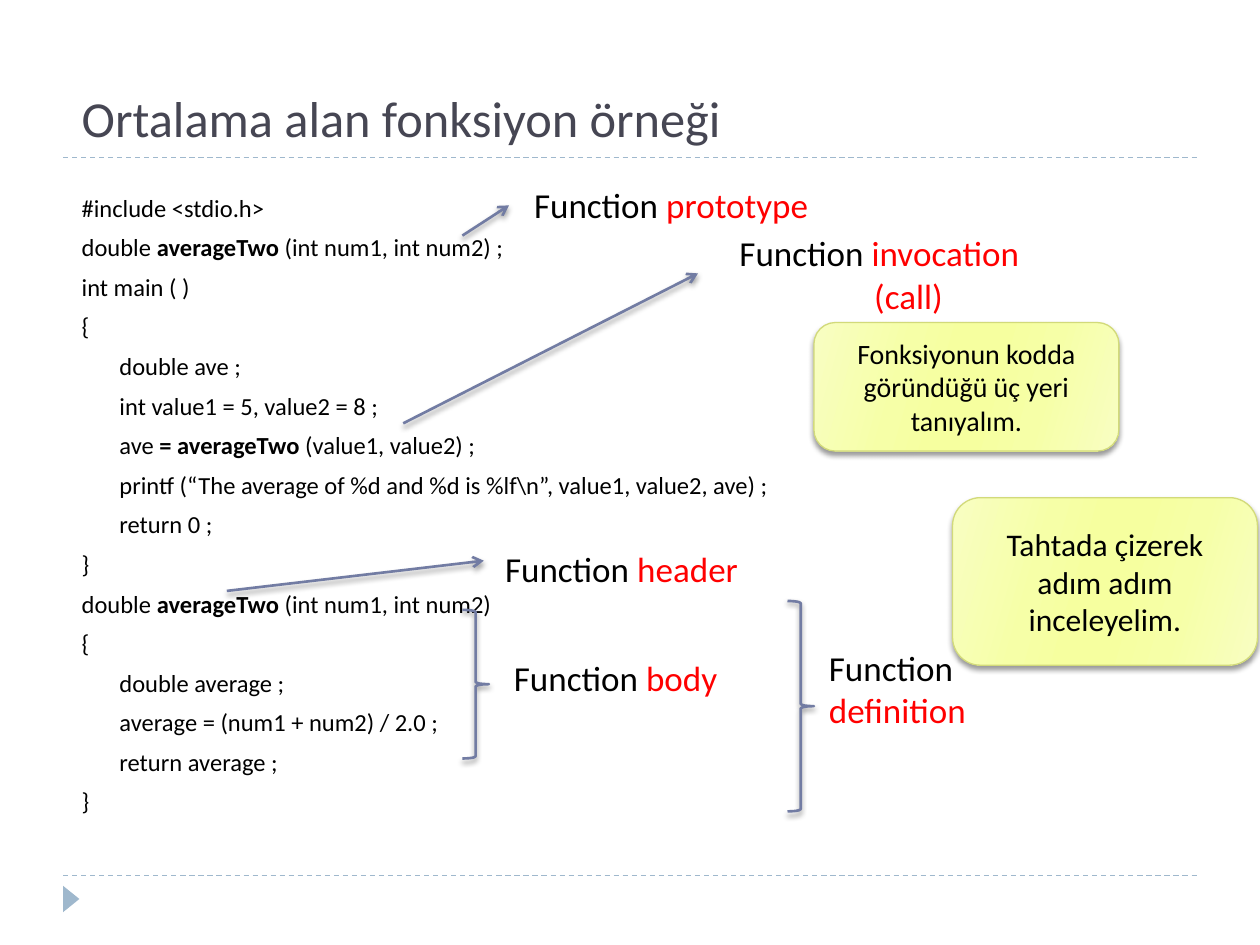
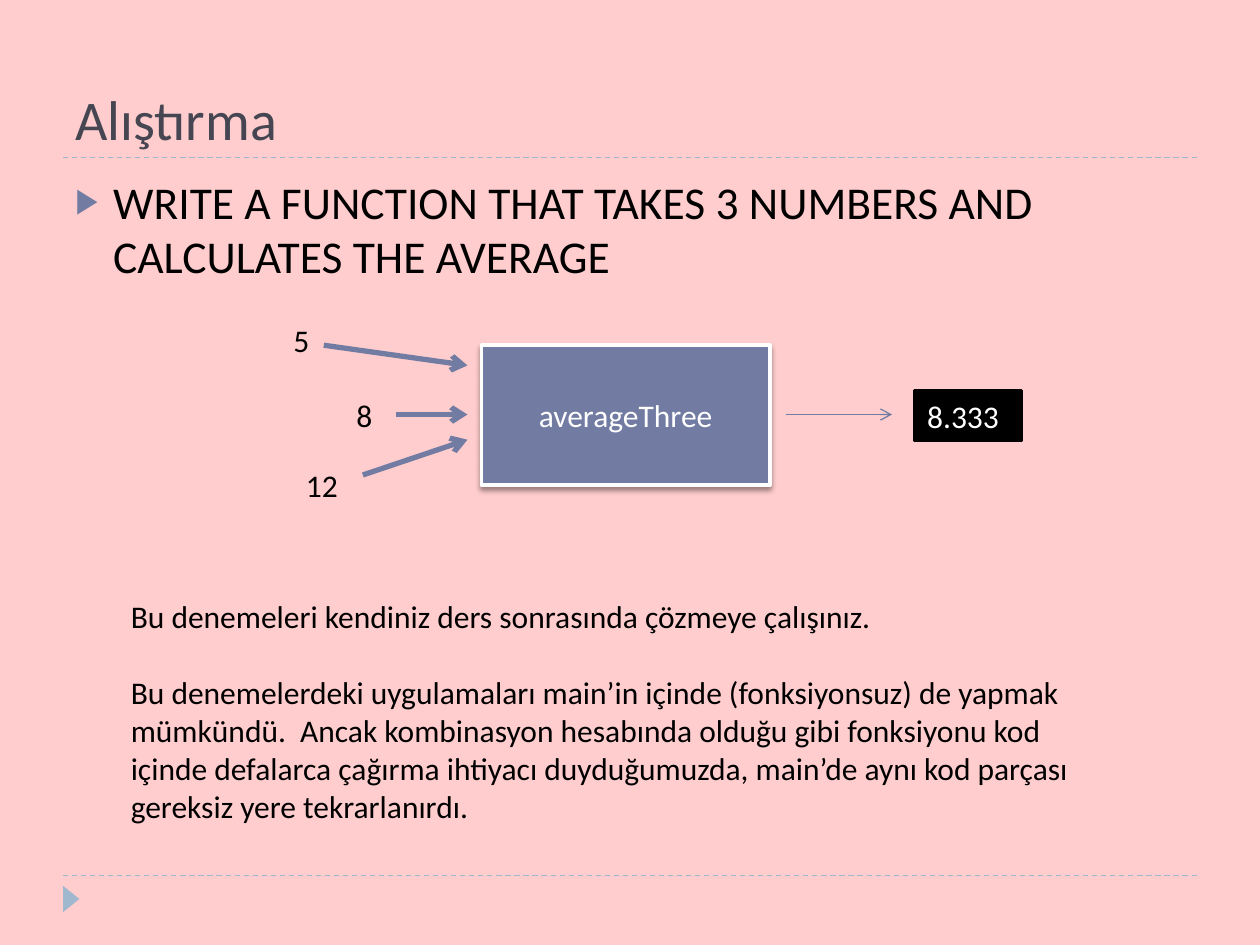
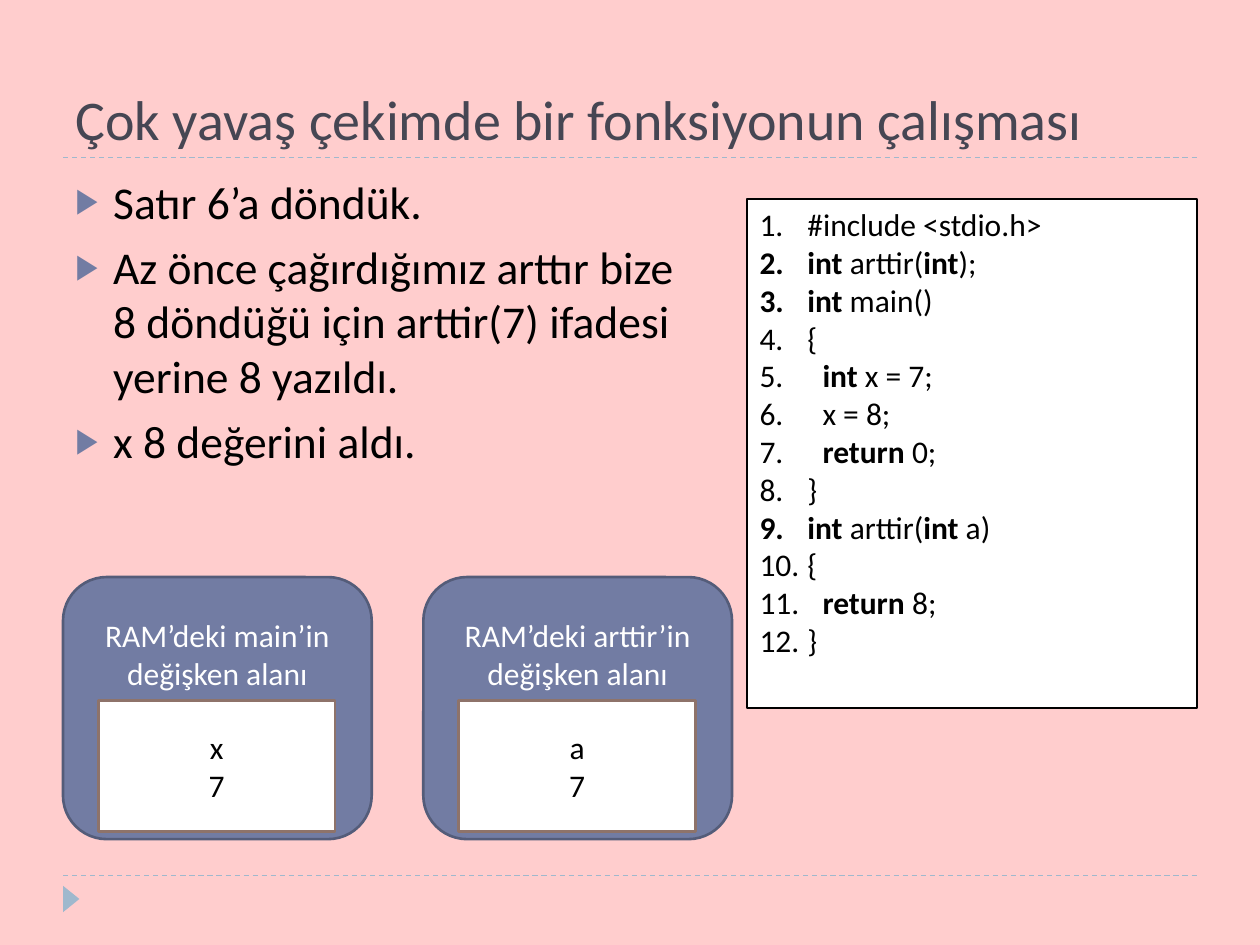
from lxml.etree import SubElement
from pptx import Presentation
from pptx.dml.color import RGBColor
from pptx.enum.dml import MSO_LINE
from pptx.enum.shapes import MSO_CONNECTOR, MSO_SHAPE as Shape
from pptx.enum.text import MSO_ANCHOR as Anchor, PP_ALIGN as Align
from pptx.oxml.ns import qn
from pptx.util import Inches, Pt

FONT = "Calibri"
BLACK, WHITE, RED = "000000", "FFFFFF", "FF0000"
PINK, TITLE_GREY, BLUE, BAND_BLUE = "FFCDCD", "464653", "727CA3", "9FB8CD"
DARK_BLUE, BROWN, NOTE_EDGE = "545C79", "8E736A", "D2DA7A"
NOTE_STOPS = [(0, "F8FEC2"), (30, "F6FFA7"), (45, "F6FF9F"),
              (55, "F6FF9F"), (73, "F6FFA7"), (100, "F8FEC2")]

WIDTH, HEIGHT = 10, 7.5
MARGIN = WIDTH / 20
CONTENT = WIDTH - 2 * MARGIN
TITLE_LINE, FOOTER_LINE = 1.25, 6.95
BODY = (MARGIN, 1.33, CONTENT, 5.4)
HANGING = 0.3

PROGRAM = [
    "#include <stdio.h>",
    "double *averageTwo* (int num1, int num2) ;",
    "int main ( )",
    "{",
    "\tdouble ave ;",
    "\tint value1 = 5, value2 = 8 ;",
    "\tave *= averageTwo *(value1, value2) ;",
    "\tprintf (“The average of %d and %d is %lf\\n”, value1, value2, ave) ;",
    "\treturn 0 ;",
    "}",
    "double *averageTwo* (int num1, int num2)",
    "{",
    "\tdouble average ;",
    "\taverage = (num1 + num2) / 2.0 ;",
    "\treturn average ;",
    "}",
]
NUMBERED_PROGRAM = [
    "#include <stdio.h>",
    "*int *arttir(*int*);",
    "*int* main()",
    "{",
    "\t*int* x = 7;",
    "\tx = 8;",
    "\t*return* 0;",
    "}",
    "*int *arttir(*int* a)",
    "{",
    "\t*return *8;",
    "}",
]


def rgb(color):
    return RGBColor.from_string(color)


def inches(*lengths):
    return [Inches(length) for length in lengths]


def add_triangle_bullet(properties):
    color = SubElement(properties, qn("a:buClr"))
    SubElement(color, qn("a:srgbClr"), val=BLUE)
    SubElement(properties, qn("a:buSzPct"), val="76000")
    SubElement(properties, qn("a:buFont"), typeface="Arial")
    SubElement(properties, qn("a:buChar"), char="▶")


def add_number(properties):
    SubElement(properties, qn("a:buFont"), typeface="+mj-lt")
    SubElement(properties, qn("a:buAutoNum"), type="arabicPeriod")


def write(shape, lines, size=18, color=BLACK, marked=None, align=Align.LEFT,
          anchor=Anchor.TOP, hanging=0, before=0, after=0, bullet=None, wrap=True):
    """Fill a shape with paragraphs; parts between asterisks are bold, or in the marked colour."""
    frame = shape.text_frame
    frame.word_wrap = wrap
    frame.vertical_anchor = anchor
    for index, line in enumerate(lines):
        paragraph = frame.add_paragraph() if index else frame.paragraphs[0]
        paragraph.alignment = align
        paragraph.space_before, paragraph.space_after = Pt(before), Pt(after)
        properties = paragraph._p.get_or_add_pPr()
        if hanging:
            properties.set("marL", str(Inches(hanging)))
            properties.set("indent", str(-Inches(hanging)))
        if bullet:
            bullet(properties)
        for position, part in enumerate(line.split("*")):
            is_marked = position % 2 == 1
            for row, words in enumerate(part.split("\n")):
                if row:
                    paragraph.add_line_break()
                if not words:
                    continue
                run = paragraph.add_run()
                run.text = words
                font = run.font
                font.name, font.size = FONT, Pt(size)
                font.bold = is_marked and marked is None
                font.color.rgb = rgb(marked if is_marked and marked else color)


def add_text(slide, box, lines, **text_format):
    write(slide.shapes.add_textbox(*inches(*box)), lines, **text_format)


def add_shadow(shape):
    effects = shape.element.spPr.find(qn("a:effectLst"))
    shadow = SubElement(effects, qn("a:outerShdw"), blurRad=str(Pt(3)), dist=str(Pt(2)),
                        dir="5400000", rotWithShape="0")
    color = SubElement(shadow, qn("a:srgbClr"), val=BLACK)
    SubElement(color, qn("a:alpha"), val="40000")


def add_figure(slide, kind, box, fill=None, line=None, weight=1.5, shadow=False):
    figure = slide.shapes.add_shape(kind, *inches(*box))
    figure.shadow.inherit = False
    if fill:
        figure.fill.solid()
        figure.fill.fore_color.rgb = rgb(fill)
    else:
        figure.fill.background()
    if line:
        figure.line.color.rgb = rgb(line)
        figure.line.width = Pt(weight)
    else:
        figure.line.fill.background()
    if shadow:
        add_shadow(figure)
    return figure


def add_line(slide, start, end, color=BLUE, weight=1.5, dashed=False, arrow=False, shadow=False):
    line = slide.shapes.add_connector(MSO_CONNECTOR.STRAIGHT, *inches(*start, *end))
    line.line.color.rgb = rgb(color)
    line.line.width = Pt(weight)
    if dashed:
        line.line.dash_style = MSO_LINE.DASH
    if arrow:
        SubElement(line.line._get_or_add_ln(), qn("a:tailEnd"), type="arrow")
    SubElement(line.element.spPr, qn("a:effectLst"))
    if shadow:
        add_shadow(line)


def add_note(slide, box, text, size):
    """Rounded box with a soft yellow gradient."""
    note = add_figure(slide, Shape.ROUNDED_RECTANGLE, box, line=NOTE_EDGE, weight=0.75, shadow=True)
    note.fill.gradient()
    note.fill.gradient_angle = 344
    stops = note.element.spPr.find(qn("a:gradFill")).find(qn("a:gsLst"))
    stops.clear()
    for percent, color in NOTE_STOPS:
        stop = SubElement(stops, qn("a:gs"), pos=str(percent * 1000))
        SubElement(stop, qn("a:srgbClr"), val=color)
    write(note, [text], size=size, align=Align.CENTER, anchor=Anchor.MIDDLE)


def add_slide(presentation, title, background, title_box=(MARGIN, 0.17, CONTENT, 1.08),
              title_size=32):
    slide = presentation.slides.add_slide(presentation.slide_layouts[6])
    slide.background.fill.solid()
    slide.background.fill.fore_color.rgb = rgb(background)
    for height in (FOOTER_LINE, TITLE_LINE):
        add_line(slide, (MARGIN, height), (WIDTH - MARGIN, height), BAND_BLUE, 0.75, dashed=True)
    marker = add_figure(slide, Shape.ISOSCELES_TRIANGLE, (0.46, 7.07, 0.21, 0.13), BAND_BLUE)
    marker.rotation = 90
    add_text(slide, title_box, [title], size=title_size, color=TITLE_GREY, anchor=Anchor.BOTTOM)
    return slide


def add_bullets(slide, lines):
    add_text(slide, BODY, lines, size=26, hanging=HANGING, before=6, bullet=add_triangle_bullet)


def build_average_example(presentation):
    slide = add_slide(presentation, "Ortalama alan fonksiyon örneği", WHITE,
                      (0.55, 0.62, 8.22, 0.6), 28.8)
    add_text(slide, (0.55, 1.48, 8.84, 5.08), PROGRAM, size=14, hanging=HANGING, before=5.8)
    for left, top, width, label in [
        (6.48, 5.08, 1.41, "Function *definition*"),
        (4.14, 1.41, 2.66, "Function *prototype*"),
        (5.77, 1.79, 2.75, "Function *invocation*"),
        (6.84, 2.13, 1, "*(call)*"),
        (3.98, 5.16, 2.25, "Function *body*"),
        (3.91, 4.3, 2.25, "Function *header*"),
    ]:
        add_text(slide, (left, top, width, 0.44), [label], size=20, marked=RED)
    for start, end in [((3.2, 3.36), (5.54, 2.17)),
                       ((1.8, 4.69), (3.84, 4.45)),
                       ((3.67, 1.87), (4.04, 1.63))]:
        add_line(slide, start, end, arrow=True, shadow=True)
    for left, top, height in [(3.67, 4.84, 1.18), (6.25, 4.77, 1.67)]:
        add_figure(slide, Shape.RIGHT_BRACE, (left, top, 0.21, height), line=BLUE, shadow=True)
    add_note(slide, (6.46, 2.56, 2.42, 1.02), "Fonksiyonun kodda göründüğü üç yeri tanıyalım.", 16)
    add_note(slide, (7.56, 3.95, 2.42, 1.33), "Tahtada çizerek adım adım inceleyelim.", 18)


def build_exercise(presentation):
    slide = add_slide(presentation, "Alıştırma", PINK)
    add_bullets(slide, ["WRITE A FUNCTION THAT TAKES 3 NUMBERS AND CALCULATES THE AVERAGE"])
    function_box = add_figure(slide, Shape.RECTANGLE, (3.82, 2.74, 2.29, 1.11), BLUE, WHITE, 2,
                              shadow=True)
    write(function_box, ["averageThree"], color=WHITE, align=Align.CENTER, anchor=Anchor.MIDDLE)
    for number, left, top, start, end in [
        ("5", 2.23, 2.5, (2.57, 2.74), (3.71, 2.9)),
        ("8", 2.73, 3.09, (3.14, 3.29), (3.71, 3.29)),
        ("12", 2.33, 3.65, (2.88, 3.77), (3.71, 3.49)),
    ]:
        add_text(slide, (left, top, 0.5, 0.4), [number])
        add_line(slide, start, end, weight=3, arrow=True)
    add_line(slide, (6.24, 3.29), (7.08, 3.29), weight=0.75, arrow=True)
    result = add_figure(slide, Shape.RECTANGLE, (7.26, 3.1, 0.85, 0.4), BLACK, BLACK)
    write(result, ["8.333"], color=WHITE, wrap=False)
    add_text(slide, (0.94, 4.69, 7.97, 1.92), [
        "Bu denemeleri kendiniz ders sonrasında çözmeye çalışınız.",
        "Bu denemelerdeki uygulamaları main’in içinde (fonksiyonsuz) de yapmak mümkündü.  "
        "Ancak kombinasyon hesabında olduğu gibi fonksiyonu kod içinde defalarca çağırma "
        "ihtiyacı duyduğumuzda, main’de aynı kod parçası gereksiz yere tekrarlanırdı.",
    ], after=22)


def build_slow_motion(presentation):
    slide = add_slide(presentation, "Çok yavaş çekimde bir fonksiyonun çalışması", PINK)
    add_bullets(slide, [
        "Satır 6’a döndük.",
        "Az önce çağırdığımız arttır bize\n8 döndüğü için arttir(7) ifadesi\nyerine 8 yazıldı.",
        "x 8 değerini aldı.",
    ])
    code_box = add_figure(slide, Shape.RECTANGLE, (5.93, 1.58, 3.57, 4.04), WHITE, BLACK)
    write(code_box, NUMBERED_PROGRAM, hanging=0.38, bullet=add_number)
    for column, (function, variable) in enumerate([("main’in", "x"), ("arttir’in", "a")]):
        left = MARGIN + column * 2.86
        memory = add_figure(slide, Shape.ROUNDED_RECTANGLE, (left, 4.58, 2.45, 2.08),
                            BLUE, DARK_BLUE)
        memory.text_frame.margin_top = Inches(0.21)
        write(memory, [f"RAM’deki {function} değişken alanı"], color=WHITE, align=Align.CENTER)
        cell = add_figure(slide, Shape.RECTANGLE, (left + 0.28, 5.56, 1.88, 1.04), WHITE, BROWN)
        write(cell, [f"{variable}\n7"], align=Align.CENTER, anchor=Anchor.MIDDLE)


def main():
    presentation = Presentation()
    presentation.slide_width, presentation.slide_height = inches(WIDTH, HEIGHT)
    build_average_example(presentation)
    build_exercise(presentation)
    build_slow_motion(presentation)
    presentation.save("out.pptx")


if __name__ == "__main__":
    main()
